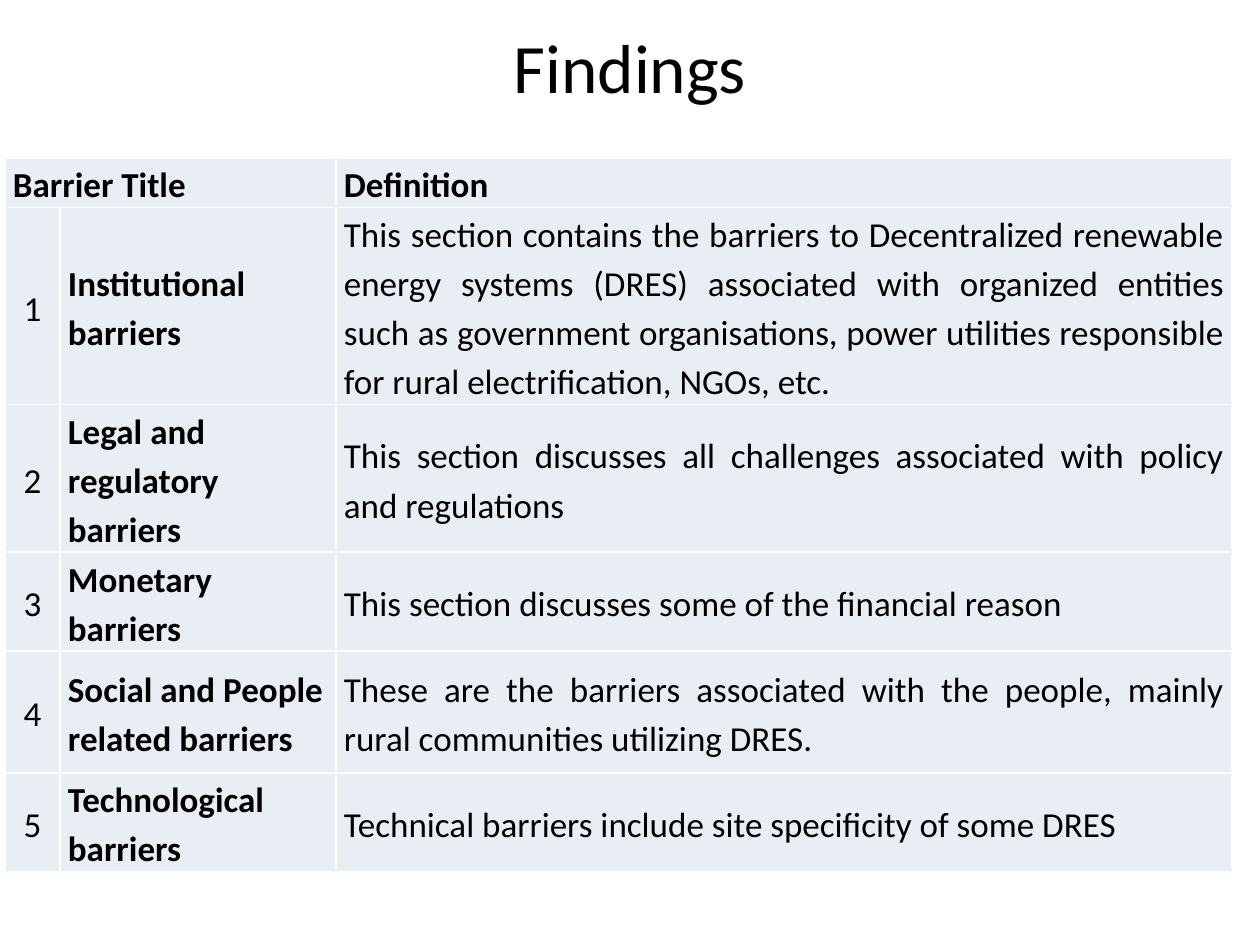
import pptx
import pptx.dml.color
import pptx.enum.text
import pptx.oxml
import pptx.oxml.ns
import pptx.util

EMU_PER_PX = 914400 / 126
COLORS = {"text": "000000", "cell": "E9EDF4", "border": "FFFFFF"}
ALIGN = pptx.enum.text.PP_ALIGN
MIDDLE = pptx.enum.text.MSO_ANCHOR.MIDDLE

COLUMN_WIDTHS = [55, 276, 896]
ROW_HEIGHTS = [35, 162, 142, 81, 122, 81]
BARRIERS = [
    ("Institutional barriers",
     "This section contains the barriers to Decentralized renewable energy systems (DRES) "
     "associated with organized entities such as government organisations, power utilities "
     "responsible for rural electrification, NGOs, etc."),
    ("Legal and regulatory barriers",
     "This section discusses all challenges associated with policy and regulations"),
    ("Monetary barriers",
     "This section discusses some of the financial reason"),
    ("Social and People related barriers",
     "These are the barriers associated with the people, mainly rural communities "
     "utilizing DRES."),
    ("Technological barriers",
     "Technical barriers include site specificity of some DRES"),
]


def px(length):
    return pptx.util.Emu(round(length * EMU_PER_PX))


def rgb(name):
    return pptx.dml.color.RGBColor.from_string(COLORS[name])


class SlideBuilder:
    font = "Calibri"

    def __init__(self, slide):
        self.slide = slide

    def format_text(self, paragraph, size, align, bold=False):
        paragraph.alignment = align
        for run in paragraph.runs:
            run.font.name = self.font
            run.font.size = pptx.util.Pt(size)
            run.font.bold = bold
            run.font.color.rgb = rgb("text")

    def title(self, text, left, top, width, height):
        heading = self.slide.shapes.title
        heading.left, heading.top = px(left), px(top)
        heading.width, heading.height = px(width), px(height)
        frame = heading.text_frame
        frame.text = text
        frame.auto_size = pptx.enum.text.MSO_AUTO_SIZE.NONE
        frame.vertical_anchor = MIDDLE
        self.format_text(frame.paragraphs[0], 39.6, ALIGN.CENTER)

    def table(self, left, top, widths, heights):
        frame = self.slide.shapes.add_table(
            len(heights), len(widths), px(left), px(top), px(sum(widths)), px(sum(heights)))
        grid = frame.table
        for column, width in zip(grid.columns, widths):
            column.width = px(width)
        for row, height in zip(grid.rows, heights):
            row.height = px(height)
            for cell in row.cells:
                self.cell_style(cell)
        return grid

    def cell_style(self, cell):
        cell.vertical_anchor = MIDDLE
        cell.margin_left = cell.margin_right = px(8)
        cell.margin_top = cell.margin_bottom = 0
        properties = cell._tc.get_or_add_tcPr()
        for side in ("lnL", "lnR", "lnT", "lnB"):
            properties.append(pptx.oxml.parse_xml(
                f'<a:{side} {pptx.oxml.ns.nsdecls("a")} w="12700"><a:solidFill>'
                f'<a:srgbClr val="{COLORS["border"]}"/></a:solidFill></a:{side}>'))
        cell.fill.solid()
        cell.fill.fore_color.rgb = rgb("cell")

    def cell_text(self, cell, text, align, bold=False):
        cell.text_frame.text = text
        paragraph = cell.text_frame.paragraphs[0]
        paragraph.line_spacing = 1.15
        self.format_text(paragraph, 20, align, bold)


def main():
    deck = pptx.Presentation()
    deck.slide_width, deck.slide_height = px(1260), px(945)
    builder = SlideBuilder(deck.slides.add_slide(deck.slide_layouts[5]))

    builder.title("Findings", 63, 32, 1134, 67)

    # Table of barriers, header first
    barriers = builder.table(5, 158, COLUMN_WIDTHS, ROW_HEIGHTS)
    barriers.cell(0, 0).merge(barriers.cell(0, 1))
    builder.cell_text(barriers.cell(0, 0), "Barrier Title", ALIGN.JUSTIFY, bold=True)
    builder.cell_text(barriers.cell(0, 2), "Definition", ALIGN.JUSTIFY, bold=True)

    # One numbered row per barrier
    for number, (name, definition) in enumerate(BARRIERS, start=1):
        builder.cell_text(barriers.cell(number, 0), str(number), ALIGN.CENTER)
        builder.cell_text(barriers.cell(number, 1), name, ALIGN.LEFT, bold=True)
        builder.cell_text(barriers.cell(number, 2), definition, ALIGN.JUSTIFY)

    deck.save("out.pptx")


if __name__ == "__main__":
    main()
